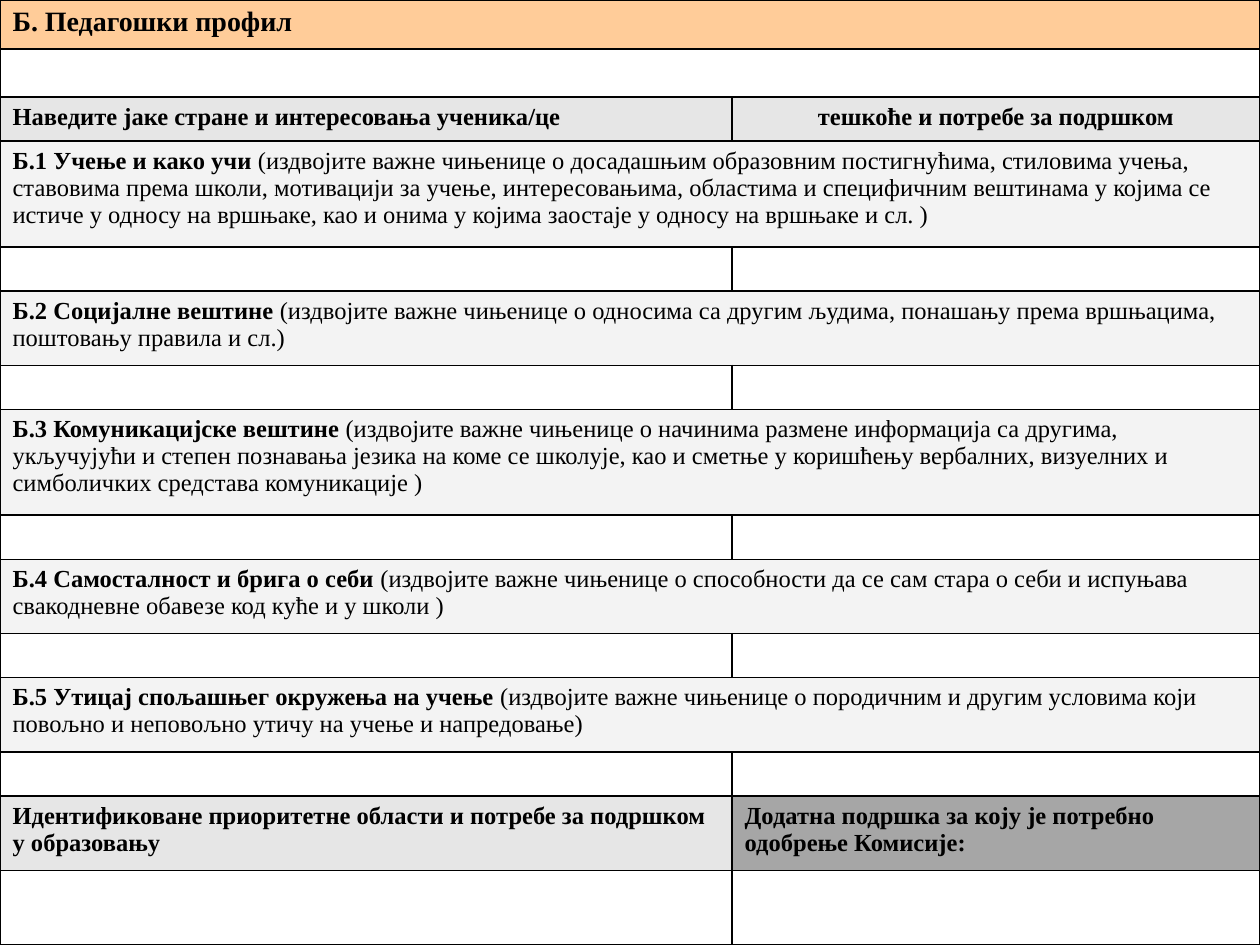
from dataclasses import dataclass

from pptx import Presentation
from pptx import util as u
from pptx.dml.color import RGBColor
from pptx.enum import text
from pptx.oxml import parse_xml
from pptx.oxml.ns import nsdecls


@dataclass(frozen=True)
class Theme:
    font: str = "Times New Roman"
    ink: str = "000000"
    paper: str = "FFFFFF"
    peach: str = "FFCC99"
    head: str = "E6E6E6"
    pale: str = "F3F3F3"
    dark: str = "A6A6A6"
    title: int = 16
    body: int = 14
    line: float = 1


THEME = Theme()

# Section name, guidance, row height
SECTIONS = [
    ("Б.1 Учење и како учи ",
     "(издвојите важне чињенице о досадашњим образовним постигнућима, "
     "стиловима учења, ставовима према школи, мотивацији за учење, "
     "интересовањима, областима и специфичним вештинама у којима се истиче "
     "у односу на вршњаке, као и онима у којима заостаје у односу на "
     "вршњаке и сл. )", 0.84),
    ("Б.2 Социјалне вештине ",
     "(издвојите важне чињенице о односима са другим људима, понашању "
     "према вршњацима, поштовању правила и сл.)", 0.59),
    ("Б.3 Комуникацијске вештине ",
     "(издвојите важне чињенице о начинима размене информација са другима, "
     "укључујући и степен познавања језика на коме се школује, као и сметње "
     "у коришћењу вербалних, визуелних и симболичких средстава "
     "комуникације )", 0.84),
    ("Б.4 Самосталност и брига о себи ",
     "(издвојите важне чињенице о способности да се сам стара о себи и "
     "испуњава свакодневне обавезе код куће и у школи )", 0.59),
    ("Б.5 Утицај спољашњег окружења на учење ",
     "(издвојите важне чињенице о породичним и другим условима који "
     "повољно и неповољно утичу на учење и напредовање)", 0.59),
]
COLS = [5.81, 4.19]
GAP = 0.35  # height of an answer row


def write(par, words, size=THEME.body, bold=True, color=THEME.ink):
    """Add one formatted run to a paragraph."""
    run = par.add_run()
    run.text = words
    run.font.name = THEME.font
    run.font.size = u.Pt(size)
    run.font.bold = bold
    run.font.color.rgb = RGBColor.from_string(color)


class Form:
    def __init__(self, deck, theme):
        self.theme = theme
        self.slide = deck.slides.add_slide(deck.slide_layouts[6])

    def table(self, cols, rows):
        frame = self.slide.shapes.add_table(
            len(rows), len(cols), 0, 0,
            u.Inches(sum(cols)), u.Inches(sum(rows)))
        self.grid = frame.table
        self.grid.first_row = self.grid.horz_banding = False
        for col, width in zip(self.grid.columns, cols):
            col.width = u.Inches(width)
        for row, height in zip(self.grid.rows, rows):
            row.height = u.Inches(height)
        for cell in self.grid.iter_cells():
            self.border(cell)
            self.shade(cell, self.theme.paper)
            # Blank cells need no padding, so short rows keep their height
            cell.margin_top = cell.margin_bottom = 0

    def border(self, cell):
        props = cell._tc.get_or_add_tcPr()
        for side in ("lnL", "lnR", "lnT", "lnB"):
            props.append(parse_xml(
                f'<a:{side} {nsdecls("a")} w="{u.Pt(self.theme.line)}">'
                f'<a:solidFill><a:srgbClr val="{self.theme.ink}"/>'
                f'</a:solidFill></a:{side}>'))

    def shade(self, cell, color):
        cell.fill.solid()
        cell.fill.fore_color.rgb = RGBColor.from_string(color)

    def cell(self, row, col, words, fill, note="", size=THEME.body,
             align=text.PP_ALIGN.LEFT):
        cell = self.grid.cell(row, col)
        cell.margin_top = cell.margin_bottom = u.Inches(0.05)
        self.shade(cell, fill)
        par = cell.text_frame.paragraphs[0]
        par.alignment = align
        write(par, words, size=size)
        if note:
            write(par, note, bold=False)

    def span(self, row):
        self.grid.cell(row, 0).merge(self.grid.cell(row, 1))


def main():
    deck = Presentation()
    deck.slide_width, deck.slide_height = u.Inches(10), u.Inches(7.5)
    form = Form(deck, THEME)

    # Grid: headings, section and answer pairs, closing rows
    pairs = [high for _, _, tall in SECTIONS for high in (tall, GAP)]
    form.table(COLS, [0.39, 0.38, GAP, *pairs, 0.59, 0.59])

    # Headings
    form.span(0)
    form.span(1)
    form.cell(0, 0, "Б. Педагошки профил", THEME.peach, size=THEME.title)
    form.cell(2, 0, "Наведите јаке стране и интересовања ученика/це",
              THEME.head)
    form.cell(2, 1, "тешкоће и потребе за подршком", THEME.head,
              align=text.PP_ALIGN.CENTER)

    # Sections, each followed by an answer row
    for i, (name, note, _) in enumerate(SECTIONS):
        row = 3 + 2 * i
        form.span(row)
        form.cell(row, 0, name, THEME.pale, note=note)

    # Closing
    last = 3 + 2 * len(SECTIONS)
    form.cell(last, 0, "Идентификоване приоритетне области и потребе за "
              "подршком у образовању", THEME.head)
    form.cell(last, 1, "Додатна подршка за коју је потребно одобрење "
              "Комисије:", THEME.dark)

    deck.save("out.pptx")


if __name__ == "__main__":
    main()
